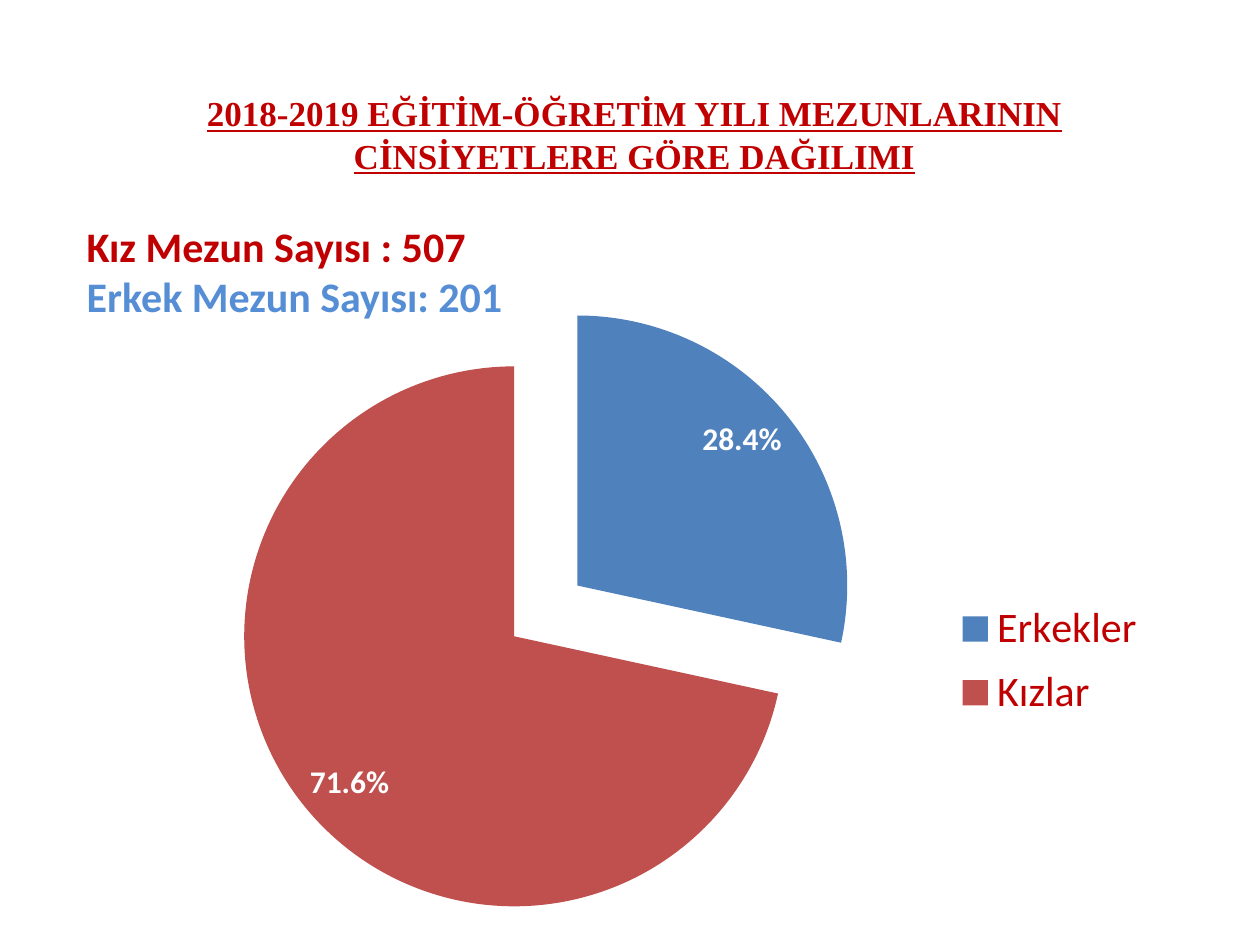
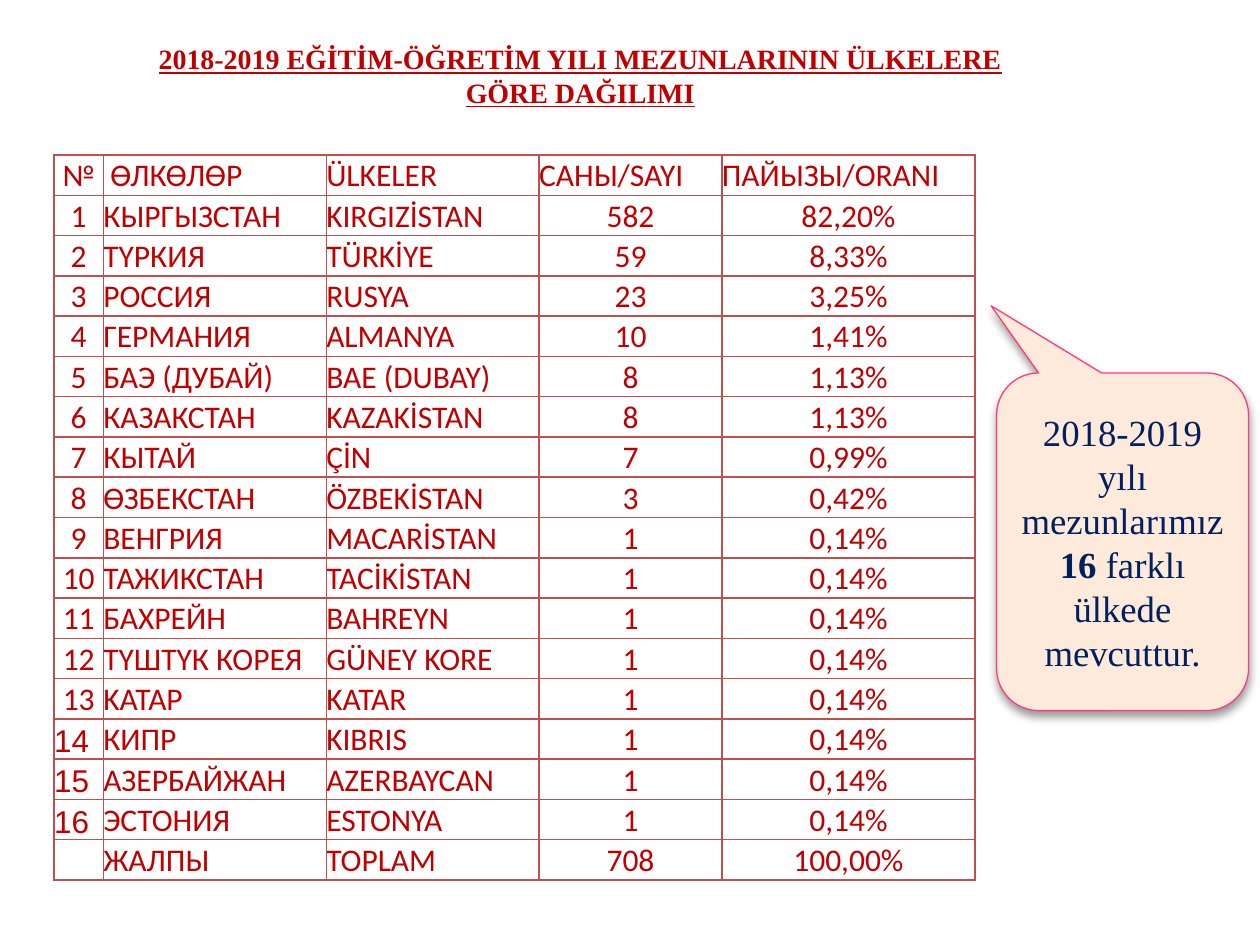
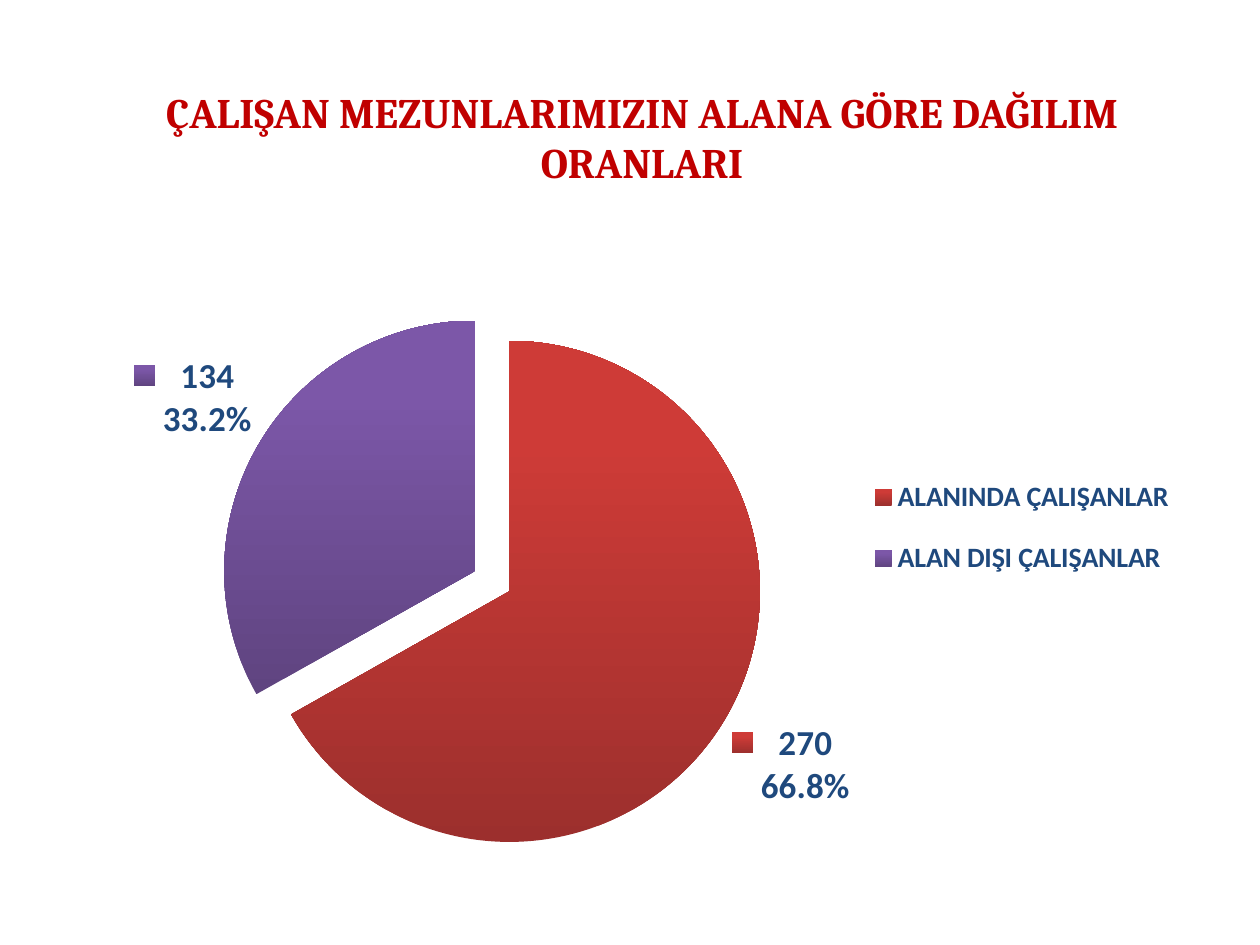
"""Builds three slides on the 2018-2019 graduates: gender, country and field of work."""
from lxml import etree
from pptx import Presentation
from pptx.chart.data import CategoryChartData
from pptx.dml.color import RGBColor
from pptx.enum.chart import XL_CHART_TYPE, XL_LABEL_POSITION, XL_LEGEND_POSITION
from pptx.enum.shapes import MSO_SHAPE
from pptx.enum.text import MSO_ANCHOR, MSO_AUTO_SIZE, PP_ALIGN
from pptx.oxml import parse_xml
from pptx.oxml.ns import nsdecls, qn
from pptx.util import Inches, Pt

LEFT, CENTER = PP_ALIGN.LEFT, PP_ALIGN.CENTER
TOP, MIDDLE, BOTTOM = MSO_ANCHOR.TOP, MSO_ANCHOR.MIDDLE, MSO_ANCHOR.BOTTOM
INSIDE_END, OUTSIDE_END = XL_LABEL_POSITION.INSIDE_END, XL_LABEL_POSITION.OUTSIDE_END

RED = RGBColor(0xC0, 0x00, 0x00)
SKY = RGBColor(0x55, 0x8E, 0xD5)
NAVY = RGBColor(0x00, 0x20, 0x60)
WHITE = RGBColor(0xFF, 0xFF, 0xFF)
PEACH = RGBColor(0xFD, 0xEA, 0xDA)
PINK = RGBColor(0xFF, 0x3B, 0x7C)
BRICK = RGBColor(0xC0, 0x50, 0x4D)
STEEL = RGBColor(0x4F, 0x81, 0xBD)
DEEP_BLUE = RGBColor(0x1F, 0x49, 0x7D)
DARK_RED, BRIGHT_RED = RGBColor(0x9C, 0x2F, 0x2D), RGBColor(0xCE, 0x3B, 0x37)
DARK_PURPLE, BRIGHT_PURPLE = RGBColor(0x5F, 0x44, 0x80), RGBColor(0x7C, 0x57, 0xA8)

SERIF, SANS = "Times New Roman", "Calibri"

GENDER_TITLE = "2018-2019 EĞİTİM-ÖĞRETİM YILI MEZUNLARININ CİNSİYETLERE GÖRE DAĞILIMI"
COUNTRY_TITLE = "2018-2019 EĞİTİM-ÖĞRETİM YILI MEZUNLARININ ÜLKELERE GÖRE DAĞILIMI"
FIELD_TITLE = "ÇALIŞAN MEZUNLARIMIZIN ALANA GÖRE DAĞILIM ORANLARI"

GENDER_COUNTS = [("Kız Mezun Sayısı : 507", RED), ("Erkek Mezun Sayısı: 201", SKY)]
GENDER_SHARES = [("Erkekler", 28.4, STEEL), ("Kızlar", 71.6, BRICK)]
FIELD_SHARES = [
    ("ALANINDA ÇALIŞANLAR", 270, (DARK_RED, BRIGHT_RED)),
    ("ALAN DIŞI ÇALIŞANLAR", 134, (DARK_PURPLE, BRIGHT_PURPLE)),
]
CALLOUT = [
    [("2018-2019 yılı mezunlarımız", False)],
    [("16 ", True), ("farklı ülkede", False)],
    [("mevcuttur.", False)],
]
HEADER = ("№", " ӨЛКӨЛӨР", "ÜLKELER", "САНЫ/SAYI", "ПАЙЫЗЫ/ORANI")
COUNTRIES = [
    ("КЫРГЫЗСТАН", "KIRGIZİSTAN", "582", "82,20%"),
    ("ТҮРКИЯ", "TÜRKİYE", "59", "8,33%"),
    ("РОССИЯ", "RUSYA", "23", "3,25%"),
    ("ГЕРМАНИЯ", "ALMANYA", "10", "1,41%"),
    ("БАЭ (ДУБАЙ)", "BAE (DUBAY)", "8", "1,13%"),
    ("КАЗАКСТАН", "KAZAKİSTAN", "8", "1,13%"),
    ("КЫТАЙ", "ÇİN", "7", "0,99%"),
    ("ӨЗБЕКСТАН", "ÖZBEKİSTAN", "3", "0,42%"),
    ("ВЕНГРИЯ", "MACARİSTAN", "1", "0,14%"),
    ("ТАЖИКСТАН", "TACİKİSTAN", "1", "0,14%"),
    ("БАХРЕЙН", "BAHREYN", "1", "0,14%"),
    ("ТҮШТҮК КОРЕЯ", "GÜNEY KORE", "1", "0,14%"),
    ("KATAP", "KATAR", "1", "0,14%"),
    ("КИПР", "KIBRIS", "1", "0,14%"),
    ("АЗЕРБАЙЖАН", "AZERBAYCAN", "1", "0,14%"),
    ("ЭСТОНИЯ", "ESTONYA", "1", "0,14%"),
]
TOTAL = ("", "ЖАЛПЫ", "TOPLAM", "708", "100,00%")
COLUMN_WIDTHS = (0.39, 1.77, 1.69, 1.45, 2.01)
ROW_HEIGHT = 0.32
LAST_CENTERED_NUMBER = 13


def place(*lengths):
    return [Inches(length) for length in lengths]


def shadow():
    return parse_xml(
        f'<a:effectLst {nsdecls("a")}><a:outerShdw blurRad="66000" dist="38100" dir="5400000" '
        'algn="t" rotWithShape="0"><a:srgbClr val="000000"><a:alpha val="40000"/></a:srgbClr>'
        "</a:outerShdw></a:effectLst>")


def style_font(font, size, color, name=SANS, bold=False):
    font.size, font.name, font.bold = Pt(size), name, bold
    font.color.rgb = color


def add_span(para, text, size, color, name=SANS, bold=False, shadowed=False):
    span = para.add_run()
    span.text = text
    style_font(span.font, size, color, name, bold)
    if shadowed:
        span.font._element.find(qn("a:solidFill")).addnext(shadow())
    return span


def add_page(deck, title, at, size, name=SERIF, anchor=TOP, underline=True, shadowed=False):
    page = deck.slides.add_slide(deck.slide_layouts[5])
    box = page.shapes.title
    box.left, box.top, box.width, box.height = place(*at)
    frame = box.text_frame
    frame.auto_size, frame.word_wrap = MSO_AUTO_SIZE.NONE, True
    frame.vertical_anchor = anchor
    para = frame.paragraphs[0]
    para.alignment = CENTER
    span = add_span(para, title, size, RED, name, True, shadowed)
    span.font.underline = underline
    return page


def set_layout(element, x, y, width, height, inner=False):
    old = element.find(qn("c:layout"))
    if old is not None:
        element.remove(old)
    target = '<c:layoutTarget val="inner"/>' if inner else ""
    layout = parse_xml(
        f'<c:layout {nsdecls("c")}><c:manualLayout>{target}<c:xMode val="edge"/><c:yMode val="edge"/>'
        f'<c:x val="{x}"/><c:y val="{y}"/><c:w val="{width}"/><c:h val="{height}"/>'
        "</c:manualLayout></c:layout>")
    position = element.find(qn("c:legendPos"))
    if position is None:
        element.insert(0, layout)
    else:
        position.addnext(layout)


def add_pie(page, at, shares, explosion, plot_at, legend_at):
    data = CategoryChartData()
    data.categories = [share[0] for share in shares]
    data.add_series("Series 1", [share[1] for share in shares])
    chart = page.shapes.add_chart(XL_CHART_TYPE.PIE, *place(*at), data).chart
    chart.has_title = False
    chart.has_legend = True
    chart.legend.position = XL_LEGEND_POSITION.RIGHT
    chart.legend.include_in_layout = False
    set_layout(chart.legend._element, *legend_at)
    set_layout(chart._chartSpace.chart.plotArea, *plot_at, inner=True)
    series = chart.plots[0].series[0]
    series._element.find(qn("c:tx")).addnext(
        parse_xml(f'<c:explosion {nsdecls("c")} val="{explosion}"/>'))
    for index, (_, _, paint) in enumerate(shares):
        fill = series.points[index].format.fill
        if isinstance(paint, RGBColor):
            fill.solid()
            fill.fore_color.rgb = paint
        else:
            fill.gradient()
            fill.gradient_angle = 90
            for stop, color, position in zip(fill.gradient_stops, paint, (0, 0.8)):
                stop.color.rgb = color
                stop.position = position
    return chart


def label_pie(chart, size, color, position, with_value=False):
    labels = chart.plots[0].series[0].data_labels
    style_font(labels.font, size, color, bold=True)
    labels.number_format, labels.number_format_is_linked = "0.0%", False
    labels.position = position
    labels.show_percentage = True
    labels.show_value = labels.show_legend_key = with_value
    if with_value:
        separator = etree.Element(qn("c:separator"))
        separator.text = "\n"
        labels._element.find(qn("c:showPercent")).addnext(separator)
        bubble = labels._element.find(qn("c:showBubbleSize"))
        if bubble is not None:
            bubble.addnext(separator)


def add_borders(cell):
    properties = cell._tc.get_or_add_tcPr()
    for side in ("lnL", "lnR", "lnT", "lnB"):
        properties.append(parse_xml(
            f'<a:{side} {nsdecls("a")} w="12700"><a:solidFill><a:srgbClr val="{BRICK}"/>'
            f"</a:solidFill></a:{side}>"))


def add_country_table(page):
    numbered = [(str(number), *row) for number, row in enumerate(COUNTRIES, 1)]
    rows = [HEADER, *numbered, TOTAL]
    size = (sum(COLUMN_WIDTHS), ROW_HEIGHT * len(rows))
    table = page.shapes.add_table(len(rows), len(HEADER), *place(0.43, 1.23, *size)).table
    table.first_row = table.horz_banding = False
    for column, width in zip(table.columns, COLUMN_WIDTHS):
        column.width = Inches(width)
    for row_index, row in enumerate(rows):
        table.rows[row_index].height = Inches(ROW_HEIGHT)
        for column_index, text in enumerate(row):
            cell = table.cell(row_index, column_index)
            add_borders(cell)
            cell.fill.background()
            cell.margin_left = cell.margin_right = cell.margin_top = cell.margin_bottom = 0
            cell.vertical_anchor = BOTTOM
            is_number = column_index == 0
            is_late = is_number and row_index > LAST_CENTERED_NUMBER
            is_figure = column_index > 2 and row_index > 0
            para = cell.text_frame.paragraphs[0]
            para.alignment = CENTER if is_figure or is_number and not is_late else LEFT
            if text:
                add_span(para, text, 18, RED, "Arial" if is_late else SANS)
            else:
                para.font.size = Pt(18)


def add_callout(page):
    callout = page.shapes.add_shape(MSO_SHAPE.ROUNDED_RECTANGULAR_CALLOUT, *place(7.91, 2.96, 2, 2.68))
    for index, value in enumerate((-0.522, -0.699, 0.167)):
        callout.adjustments[index] = value
    callout.fill.solid()
    callout.fill.fore_color.rgb = PEACH
    callout.line.color.rgb = PINK
    callout.line.width = Pt(0.75)
    callout._element.spPr.append(shadow())
    frame = callout.text_frame
    frame.word_wrap, frame.vertical_anchor = True, MIDDLE
    for index, spans in enumerate(CALLOUT):
        para = frame.add_paragraph() if index else frame.paragraphs[0]
        para.alignment = CENTER
        for text, bold in spans:
            add_span(para, text, 21, NAVY, SERIF, bold)


def build_gender_page(deck):
    page = add_page(deck, GENDER_TITLE, (0.98, 0.68, 8.11, 0.77), 20)
    chart = add_pie(page, (1.14, 2.21, 8.08, 5.28), GENDER_SHARES, 15,
                    (0.09, 0.03, 0.61, 0.94), (0.79, 0.47, 0.2, 0.21))
    style_font(chart.legend.font, 24, RED)
    label_pie(chart, 18, WHITE, INSIDE_END)
    box = page.shapes.add_textbox(*place(0.59, 1.7, 5.33, 0.91))
    frame = box.text_frame
    frame.word_wrap = True
    for index, (text, color) in enumerate(GENDER_COUNTS):
        para = frame.add_paragraph() if index else frame.paragraphs[0]
        add_span(para, text, 24, color, bold=True, shadowed=True)


def build_country_page(deck):
    page = add_page(deck, COUNTRY_TITLE, (1.14, 0.28, 6.93, 0.64), 16)
    add_callout(page)
    add_country_table(page)


def build_field_page(deck):
    page = add_page(deck, FIELD_TITLE, (0.5, 0.3, 9.19, 1.57), 24, "Cambria", MIDDLE, False, True)
    chart = add_pie(page, (0.57, 2.1, 9.14, 4.98), FIELD_SHARES, 8,
                    (0.13, 0.07, 0.47, 0.87), (0.68, 0.3, 0.29, 0.24))
    style_font(chart.legend.font, 16, DEEP_BLUE, bold=True)
    label_pie(chart, 20, DEEP_BLUE, OUTSIDE_END, with_value=True)


def main():
    deck = Presentation()
    deck.slide_width, deck.slide_height = place(10, 7.5)
    build_gender_page(deck)
    build_country_page(deck)
    build_field_page(deck)
    deck.save("out.pptx")


if __name__ == "__main__":
    main()
